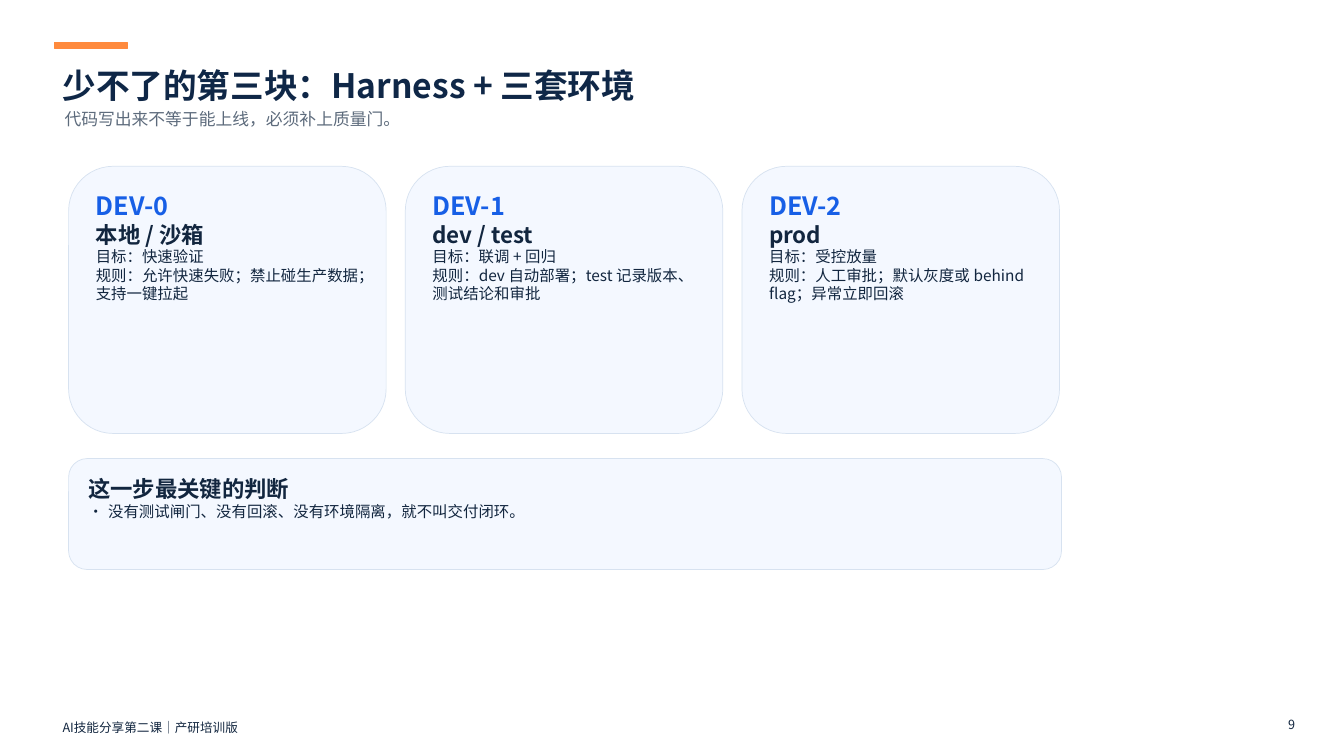
from copy import deepcopy
from lxml import etree
from pptx import Presentation
from pptx.dml.color import RGBColor
from pptx.enum import shapes, text
from pptx.oxml.ns import qn
from pptx.util import Pt

FONT = "Noto Sans CJK SC"
COLORS = {"navy": "0F2747", "ink": "12263F", "grey": "5D6B7C", "blue": "175FE6",
          "orange": "FF8A3D", "pale": "F4F8FF", "edge": "D7E2F0"}

# style: size, colour, bold
STYLES = {"title": (24, "navy", True), "sub": (12, "grey", False),
          "foot": (9, "ink", False), "tag": (18, "blue", True),
          "head": (16, "ink", True), "body": (11, "ink", False),
          "bullet": (11, "ink", False)}

TITLE = "少不了的第三块：Harness + 三套环境"
# words, style, box
LABELS = [
    ("代码写出来不等于能上线，必须补上质量门。", "sub", (40.3, 73.4, 590.4, 20.2)),
    ("AI技能分享第二课｜产研培训版", "foot", (38.9, 509.8, 259.2, 13)),
    ("9", "foot", (914.4, 507.6, 14.4, 13)),
]
CARDS = [
    ("DEV-0", "本地 / 沙箱",
     "目标：快速验证\n规则：允许快速失败；禁止碰生产数据；支持一键拉起"),
    ("DEV-1", "dev / test",
     "目标：联调 + 回归\n规则：dev 自动部署；test 记录版本、测试结论和审批"),
    ("DEV-2", "prod",
     "目标：受控放量\n规则：人工审批；默认灰度或 behind flag；异常立即回滚"),
]
VERDICT = [("这一步最关键的判断", "head"),
           ("没有测试闸门、没有回滚、没有环境隔离，就不叫交付闭环。", "bullet")]

LEFT, TOP, WIDE, HIGH, STEP = 49, 118.8, 226.8, 190.8, 240.5
VERDICT_BOX = (LEFT, 327.6, 709.2, 79.2)
BAR = (38.9, 30.2, 51.8, 4.3)
TITLE_BOX = (38.9, 41.8, 475.2, 32.4)
TIGHT, ROOMY = (5.8, 4.3), (10.1, 7.9)
INDENT = 14.3


def points(box):
    return [Pt(v) for v in box]


def rgb(name):
    return RGBColor.from_string(COLORS[name])


def bullet(par):
    props = par._p.get_or_add_pPr()
    props.set("marL", str(Pt(INDENT)))
    props.set("indent", str(-Pt(INDENT)))
    etree.SubElement(props, qn("a:buFont")).set("typeface", FONT)
    etree.SubElement(props, qn("a:buChar")).set("char", "•")


def style(par, name):
    size, color, bold = STYLES[name]
    for run in par.runs:
        for key, value in {"size": Pt(size), "bold": bold, "name": FONT}.items():
            setattr(run.font, key, value)
        run.font.color.rgb = rgb(color)
        props = run._r.get_or_add_rPr()
        etree.SubElement(props, qn("a:ea")).set("typeface", FONT)
    for gap in par._p.findall(qn("a:br")):
        gap.append(deepcopy(props))


def write(shape, lines, inset, grow=False):
    frame = shape.text_frame
    side, edge = points(inset)
    fit = text.MSO_AUTO_SIZE
    for key, value in {
            "margin_left": side, "margin_right": side,
            "margin_top": edge, "margin_bottom": edge,
            "word_wrap": True, "vertical_anchor": text.MSO_ANCHOR.TOP,
            "auto_size": fit.SHAPE_TO_FIT_TEXT if grow else fit.NONE}.items():
        setattr(frame, key, value)
    for i, (words, name) in enumerate(lines):
        par = frame.add_paragraph() if i else frame.paragraphs[0]
        par.text = words
        par.alignment = text.PP_ALIGN.LEFT
        if name == "bullet":
            bullet(par)
        style(par, name)


def panel(slide, kind, box, fill, line):
    shape = slide.shapes.add_shape(kind, *points(box))
    shape.shadow.inherit = False
    shape.fill.solid()
    shape.fill.fore_color.rgb = rgb(fill)
    shape.line.color.rgb = rgb(line)
    shape.line.width = Pt(0.5)
    return shape


def main():
    deck = Presentation()
    deck.slide_width, deck.slide_height = Pt(960), Pt(540)
    slide = deck.slides.add_slide(deck.slide_layouts.get_by_name("Title Only"))
    kind = shapes.MSO_SHAPE

    title = slide.shapes.title
    title.left, title.top, title.width, title.height = points(TITLE_BOX)
    write(title, [(TITLE, "title")], TIGHT, grow=True)
    panel(slide, kind.RECTANGLE, BAR, "orange", "orange")

    for words, name, box in LABELS:
        label = slide.shapes.add_textbox(*points(box))
        write(label, [(words, name)], TIGHT, grow=True)
    label.text_frame.paragraphs[0].alignment = text.PP_ALIGN.RIGHT

    for i, card in enumerate(CARDS):
        box = (LEFT + i * STEP, TOP, WIDE, HIGH)
        shape = panel(slide, kind.ROUNDED_RECTANGLE, box, "pale", "edge")
        write(shape, zip(card, ("tag", "head", "body")), ROOMY)

    shape = panel(slide, kind.ROUNDED_RECTANGLE, VERDICT_BOX, "pale", "edge")
    write(shape, VERDICT, ROOMY)
    deck.save("out.pptx")


if __name__ == "__main__":
    main()
